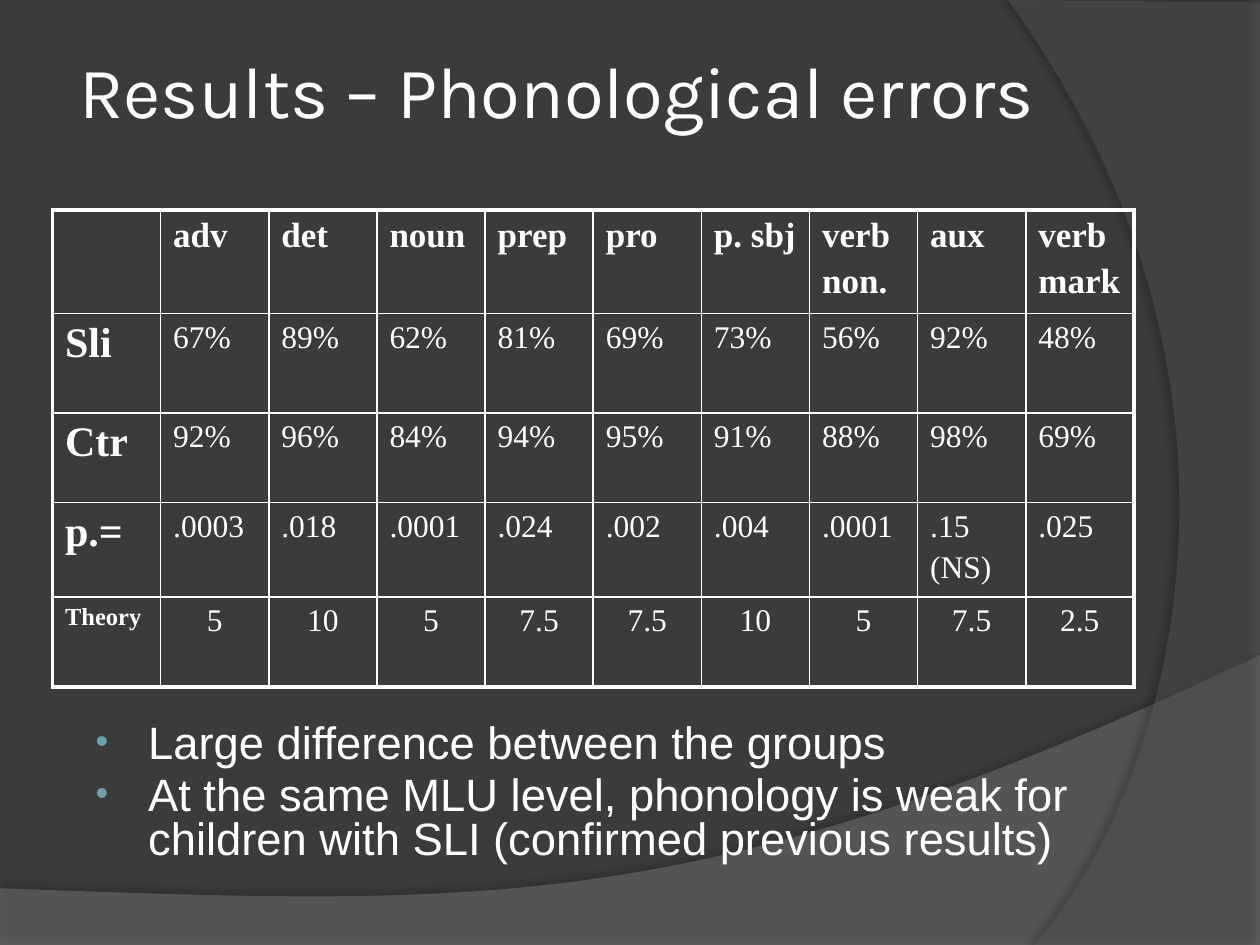
"""Build the slide on phonological errors: a results table and two conclusions."""
import lxml.etree
import pptx
import pptx.dml.color
import pptx.enum.text
import pptx.oxml.ns
import pptx.util

Pt = pptx.util.Pt
RGB = pptx.dml.color.RGBColor.from_string
NS = pptx.oxml.ns.nsdecls("a")

TITLE = "Results – Phonological errors"
ROWS = [
    ["", "adv", "det", "noun", "prep", "pro", "p. sbj", "verb\nnon.", "aux", "verb\nmark"],
    ["Sli", "67%", "89%", "62%", "81%", "69%", "73%", "56%", "92%", "48%"],
    ["Ctr", "92%", "96%", "84%", "94%", "95%", "91%", "88%", "98%", "69%"],
    ["p.=", ".0003", ".018", ".0001", ".024", ".002", ".004", ".0001", ".15\n(NS)", ".025"],
    ["Theory", "5", "10", "5", "7.5", "7.5", "10", "5", "7.5", "2.5"],
]
BULLETS = [
    "Large difference between the groups",
    "At the same MLU level, phonology is weak for children with SLI "
    "(confirmed previous results)",
]
THEME = {
    "background": "3B3B3B", "text": "FFFFFF", "bullet": "6EA0B0",
    "title": ("Karla", 41.4), "body": ("Arial", 25.9), "table": "Times New Roman",
    "header": 20, "label": 24, "small_label": 14, "value": 18,
    "outer_line": 2.25, "inner_line": 1,
}
WIDTH, HEIGHT = 720, 540
TABLE_LEFT, TABLE_TOP, COLUMN_WIDTH = 30, 120, 61.8
ROW_HEIGHTS = [56.7, 56.7, 51.3, 51.3, 51.3]
TITLE_BOX = (41.8, 30.2, 612, 41.8)
BODY_BOX = (44.6, 410.4, 612, 95.8)
SWEEPS = [
    {"before": [(0, 540.5), (WIDTH, 540.5)],
     "curve": [(720, 374.4), (402.5, 524.9), (281.5, 517.7), (0, 507.6)],
     "after": [], "fill": "7F7F7F", "alpha": 45,
     "shadow": {"alpha": 35, "blur": 4, "distance": 3.5, "angle": 270}},
    {"before": [(720, 1.4), (WIDTH, HEIGHT)],
     "curve": [(591.1, 540), (673.2, 445.7), (733, 216), (576, 0)],
     "after": [], "fill": "5E5E5E", "alpha": 40,
     "shadow": {"alpha": 45, "blur": 4, "distance": 4, "angle": 180}},
]


def element(xml):
    return lxml.etree.fromstring(xml.replace(" ", f" {NS} ", 1))


def bezier(points, steps=60):
    a, b, c, d = points
    return [
        tuple((1 - t) ** 3 * a[k] + 3 * (1 - t) ** 2 * t * b[k]
              + 3 * (1 - t) * t ** 2 * c[k] + t ** 3 * d[k] for k in (0, 1))
        for t in (i / steps for i in range(steps + 1))
    ]


def add_sweep(s, sweep):
    outline = sweep["before"] + bezier(sweep["curve"]) + sweep["after"]
    outline = [(Pt(x), Pt(y)) for x, y in outline]
    builder = s.shapes.build_freeform(*outline[0], scale=1.0)
    builder.add_line_segments(outline[1:], close=True)
    sp = builder.convert_to_shape()
    sp.shadow.inherit = False
    sp.line.fill.background()
    sp.fill.solid()
    sp.fill.fore_color.rgb = RGB(sweep["fill"])
    properties = sp.element.spPr
    color = properties.find(".//" + pptx.oxml.ns.qn("a:srgbClr"))
    color.append(element(f'<a:alpha val="{sweep["alpha"] * 1000}"/>'))
    shadow = sweep["shadow"]
    properties.find(pptx.oxml.ns.qn("a:effectLst")).append(element(
        f'<a:outerShdw blurRad="{Pt(shadow["blur"])}" dist="{Pt(shadow["distance"])}" '
        f'dir="{shadow["angle"] * 60000}" algn="ctr" rotWithShape="0"><a:srgbClr val="000000">'
        f'<a:alpha val="{shadow["alpha"] * 1000}"/></a:srgbClr></a:outerShdw>'))


def style(p, font, size, bold=False):
    for r in p.runs:
        r.font.name, r.font.size, r.font.bold = font, Pt(size), bold
        r.font.color.rgb = RGB(THEME["text"])


def space_before(p):
    p._p.get_or_add_pPr().append(
        element('<a:spcBef ><a:spcPct val="20000"/></a:spcBef>'))


def add_text(s, box, text, font, size):
    tf = s.shapes.add_textbox(*map(Pt, box)).text_frame
    tf.word_wrap = True
    tf.text = text
    for p in tf.paragraphs:
        style(p, font, size)
    return tf


def add_bullets(s):
    tf = add_text(s, BODY_BOX, "\n".join(BULLETS), *THEME["body"])
    for p in tf.paragraphs:
        p.line_spacing = 0.8
        space_before(p)
        properties = p._p.get_or_add_pPr()
        properties.set("marL", str(Pt(33)))
        properties.set("indent", str(Pt(-30)))
        for xml in (f'<a:buClr ><a:srgbClr val="{THEME["bullet"]}"/></a:buClr>',
                    '<a:buSzPct val="80000"/>',
                    '<a:buFont typeface="Arial"/>',
                    '<a:buChar char="•"/>'):
            properties.append(element(xml))


def set_borders(cell, outer_sides):
    properties = cell._tc.get_or_add_tcPr()
    for i, side in enumerate("LRTB"):
        width = THEME["outer_line" if side in outer_sides else "inner_line"]
        properties.insert(i, element(
            f'<a:ln{side} w="{Pt(width)}"><a:solidFill>'
            f'<a:srgbClr val="{THEME["text"]}"/></a:solidFill></a:ln{side}>'))


def cell_size(row, column):
    if row == 0:
        return THEME["header"]
    if column > 0:
        return THEME["value"]
    return THEME["small_label" if row == len(ROWS) - 1 else "label"]


def add_results(s):
    last_row, last_column = len(ROWS) - 1, len(ROWS[0]) - 1
    table = s.shapes.add_table(
        len(ROWS), len(ROWS[0]), Pt(TABLE_LEFT), Pt(TABLE_TOP),
        Pt(COLUMN_WIDTH * len(ROWS[0])), Pt(sum(ROW_HEIGHTS))).table
    table.first_row = table.horz_banding = False
    for column in table.columns:
        column.width = Pt(COLUMN_WIDTH)
    for row, height in zip(table.rows, ROW_HEIGHTS):
        row.height = Pt(height)
    for i, texts in enumerate(ROWS):
        for j, text in enumerate(texts):
            cell = table.cell(i, j)
            cell.fill.background()
            edges = {"L": j == 0, "R": j == last_column, "T": i == 0, "B": i == last_row}
            set_borders(cell, [side for side, outer in edges.items() if outer])
            cell.text_frame.text = text
            for p in cell.text_frame.paragraphs:
                space_before(p)
                style(p, THEME["table"], cell_size(i, j), i == 0 or j == 0)
                if i == last_row and j > 0:
                    p.alignment = pptx.enum.text.PP_ALIGN.CENTER


def main():
    prs = pptx.Presentation()
    prs.slide_width, prs.slide_height = Pt(WIDTH), Pt(HEIGHT)
    s = prs.slides.add_slide(prs.slide_layouts[6])
    s.background.fill.solid()
    s.background.fill.fore_color.rgb = RGB(THEME["background"])
    for sweep in SWEEPS:
        add_sweep(s, sweep)
    tf = add_text(s, TITLE_BOX, TITLE, *THEME["title"])
    tf.vertical_anchor = pptx.enum.text.MSO_ANCHOR.MIDDLE
    tf.margin_left = tf.margin_right = tf.margin_top = tf.margin_bottom = Pt(3.6)
    add_bullets(s)
    add_results(s)
    prs.save("out.pptx")


if __name__ == "__main__":
    main()
